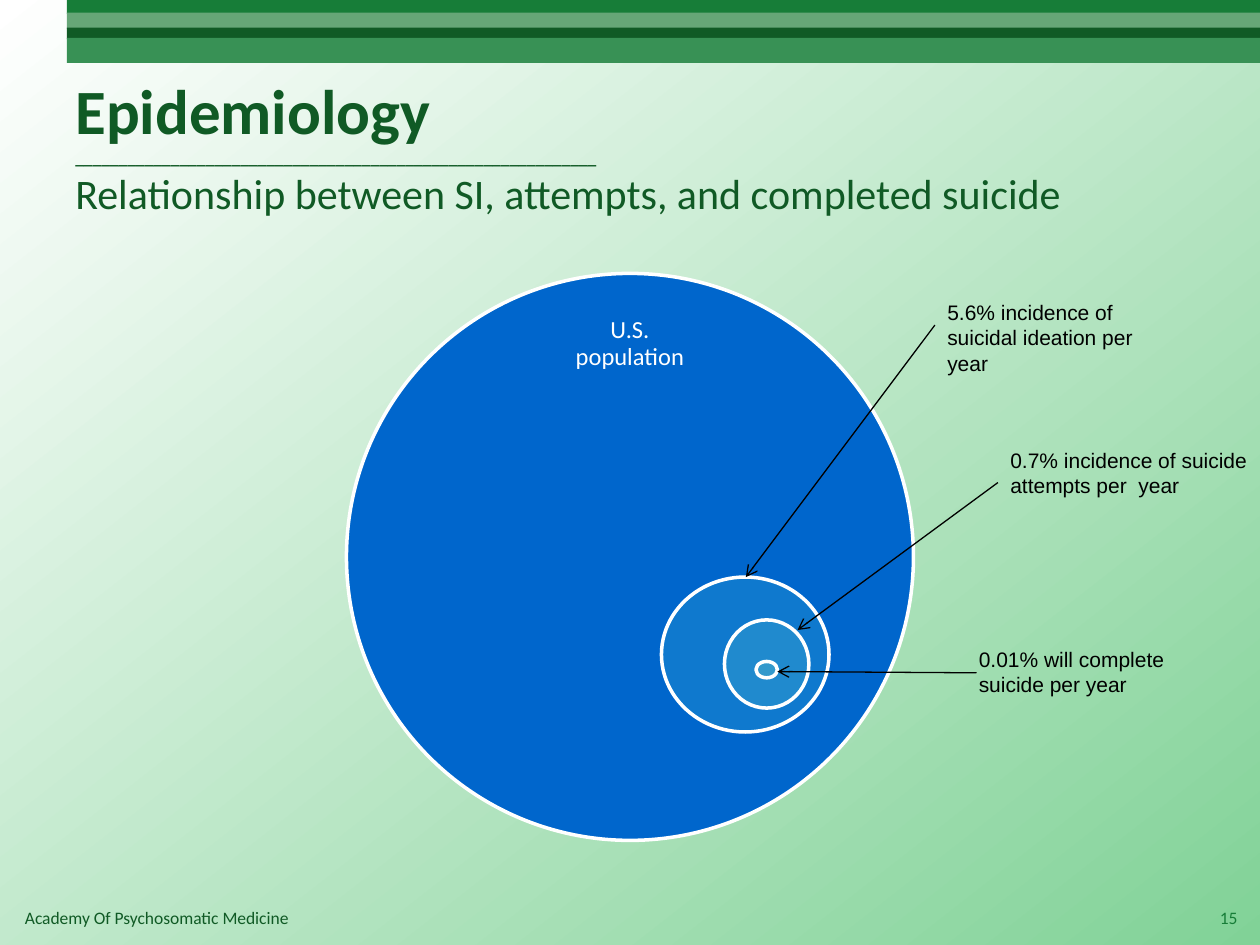
from dataclasses import dataclass

from lxml.etree import SubElement
from pptx import Presentation
from pptx.dml.color import RGBColor
from pptx.enum.shapes import MSO_CONNECTOR as Connector, MSO_SHAPE as Shape
from pptx.enum.text import MSO_ANCHOR as Anchor, PP_ALIGN as Align
from pptx.oxml.ns import qn
from pptx.util import Inches, Pt

DARK_GREEN = "105A25"
GREEN = "177D38"
WHITE = "FFFFFF"
BLACK = "000000"


@dataclass
class Box:
    left: float
    top: float
    width: float
    height: float

    def lengths(self) -> list:
        return [Inches(n) for n in (self.left, self.top, self.width, self.height)]


@dataclass
class Line:
    text: str
    size: float
    color: str = DARK_GREEN
    font: str = "Calibri"
    bold: bool = False


@dataclass
class Area:
    box: Box
    fill: str


@dataclass
class Callout:
    text: str
    box: Box
    start: tuple[float, float]
    end: tuple[float, float]


def rgb(code: str) -> RGBColor:
    return RGBColor.from_string(code)


def draw_area(slide, kind, area: Area, outline: str | None = None) -> None:
    shape = slide.shapes.add_shape(kind, *area.box.lengths())
    shape.shadow.inherit = False
    shape.fill.solid()
    shape.fill.fore_color.rgb = rgb(area.fill)
    if outline:
        shape.line.color.rgb = rgb(outline)
        shape.line.width = Pt(2)
    else:
        shape.line.fill.background()


def draw_text(slide, box: Box, lines: list[Line], align=Align.LEFT,
              anchor=Anchor.TOP, spacing: float = 1.0) -> None:
    frame = slide.shapes.add_textbox(*box.lengths()).text_frame
    frame.word_wrap = True
    frame.vertical_anchor = anchor
    for index, line in enumerate(lines):
        paragraph = frame.add_paragraph() if index else frame.paragraphs[0]
        paragraph.text = line.text
        paragraph.alignment = align
        paragraph.line_spacing = spacing
        paragraph.font.name = line.font
        paragraph.font.size = Pt(line.size)
        paragraph.font.bold = line.bold
        paragraph.font.color.rgb = rgb(line.color)


def draw_arrow(slide, start: tuple[float, float], end: tuple[float, float]) -> None:
    ends = [Inches(n) for n in (*start, *end)]
    arrow = slide.shapes.add_connector(Connector.STRAIGHT, *ends)
    arrow.line.color.rgb = rgb(BLACK)
    arrow.line.width = Pt(0.75)
    SubElement(arrow.line._get_or_add_ln(), qn("a:tailEnd"), type="arrow")
    SubElement(arrow._element.spPr, qn("a:effectLst"))


def paint_background(slide) -> None:
    fill = slide.background.fill
    fill.gradient()
    fill.gradient_angle = 360 - 52
    for stop, position, color in zip(fill.gradient_stops, (0, 1), (WHITE, "81D297")):
        stop.position = position
        stop.color.rgb = rgb(color)


STRIPES = [
    Area(Box(0.53, 0, 9.49, 0.11), GREEN),
    Area(Box(0.53, 0.1, 9.49, 0.13), "66A677"),
    Area(Box(0.53, 0.22, 9.49, 0.09), DARK_GREEN),
    Area(Box(0.53, 0.3, 9.49, 0.2), "389155"),
]
POPULATIONS = [
    Area(Box(2.75, 2.17, 4.5, 4.5), "0066CC"),
    Area(Box(5.25, 4.58, 1.33, 1.23), "0F79CE"),
    Area(Box(5.75, 4.92, 0.67, 0.7), "208ACE"),
    Area(Box(6, 5.25, 0.17, 0.13), "3399CC"),
]
CALLOUTS = [
    Callout("5.6% incidence of  suicidal ideation per year",
            Box(7.42, 2.33, 2, 0.71), (7.42, 2.58), (5.92, 4.58)),
    Callout("0.7% incidence of suicide attempts per  year",
            Box(7.92, 3.5, 2.08, 0.51), (7.92, 3.83), (6.33, 5)),
    Callout("0.01% will complete suicide per year",
            Box(7.67, 5.08, 2, 0.51), (7.75, 5.34), (6.17, 5.33)),
]
HEADING = [
    Line("Epidemiology", 36, bold=True),
    Line("_" * 60, 10, bold=True),
    Line("Relationship between SI, attempts, and completed suicide", 24),
]


def main() -> None:
    deck = Presentation()
    deck.slide_width, deck.slide_height = Inches(10), Inches(7.5)
    slide = deck.slides.add_slide(deck.slide_layouts[6])
    paint_background(slide)
    for stripe in STRIPES:
        draw_area(slide, Shape.RECTANGLE, stripe)
    draw_text(slide, Box(0.1, 7.15, 6.94, 0.27),
              [Line("Academy Of Psychosomatic Medicine", 10)])
    draw_text(slide, Box(0.5, 0.3, 9, 1.7), HEADING, anchor=Anchor.MIDDLE)
    for population in POPULATIONS:
        draw_area(slide, Shape.OVAL, population, WHITE)
    draw_text(slide, Box(4.37, 2.39, 1.26, 0.68), [Line("U.S. population", 14, WHITE)],
              Align.CENTER, Anchor.MIDDLE, 0.9)
    draw_text(slide, Box(9.52, 7.08, 0.4, 0.4), [Line("15", 10, GREEN)],
              Align.RIGHT, Anchor.MIDDLE)
    for callout in CALLOUTS:
        draw_arrow(slide, callout.start, callout.end)
        draw_text(slide, callout.box, [Line(callout.text, 12, BLACK, "Arial")])
    deck.save("out.pptx")


if __name__ == "__main__":
    main()
